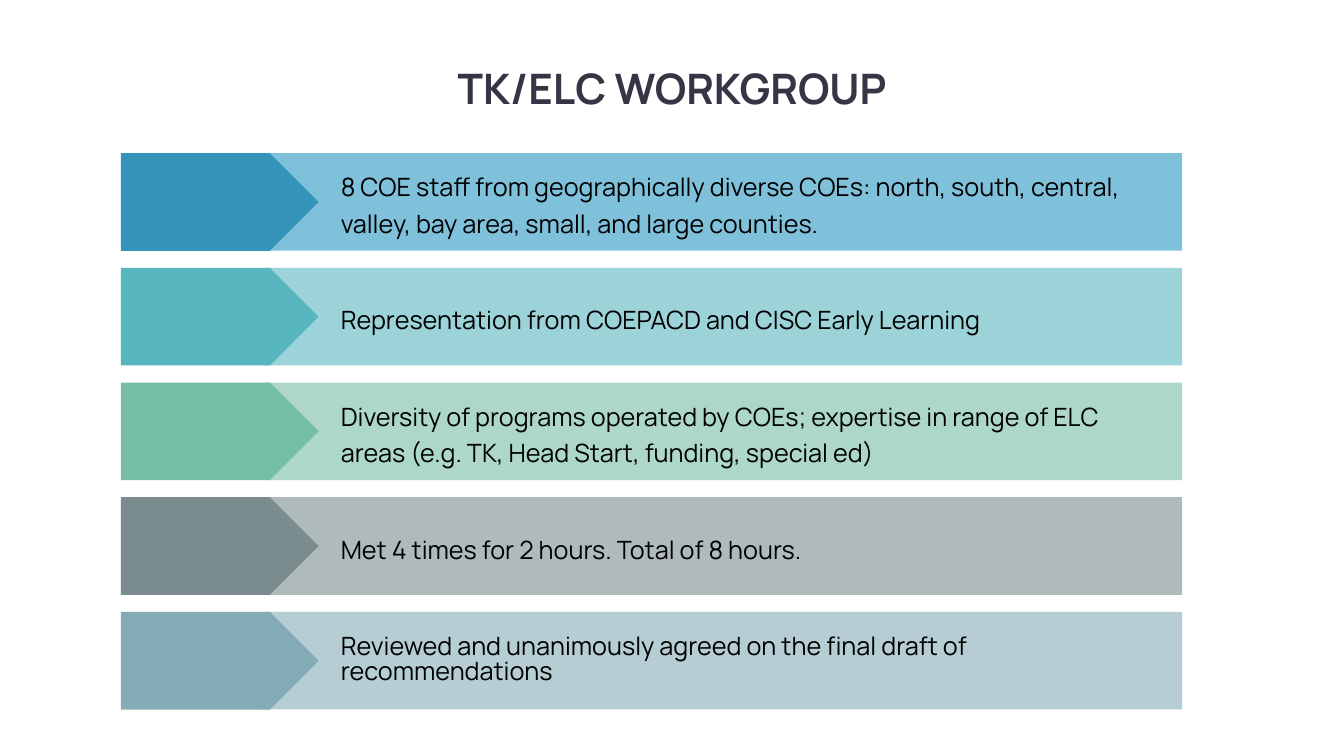
from pptx import Presentation
from pptx.dml.color import RGBColor
from pptx.enum.shapes import MSO_SHAPE
from pptx.enum.text import MSO_ANCHOR, PP_ALIGN
from pptx.util import Cm, Pt

RECTANGLE = MSO_SHAPE.RECTANGLE
PENTAGON = MSO_SHAPE.PENTAGON
MIDDLE = MSO_ANCHOR.MIDDLE
CENTER = PP_ALIGN.CENTER

FONT = "Manrope"
TITLE_COLOR = RGBColor(0x37, 0x35, 0x45)
BLACK = RGBColor(0x00, 0x00, 0x00)
BLUE, LIGHT_BLUE = RGBColor(0x34, 0x94, 0xBA), RGBColor(0x7F, 0xC1, 0xDB)
TEAL, LIGHT_TEAL = RGBColor(0x58, 0xB6, 0xC0), RGBColor(0x9B, 0xD3, 0xD9)
GREEN, LIGHT_GREEN = RGBColor(0x75, 0xBD, 0xA7), RGBColor(0xAC, 0xD7, 0xCA)
GRAY, LIGHT_GRAY = RGBColor(0x7A, 0x8C, 0x8E), RGBColor(0xAF, 0xBA, 0xBB)
STEEL, LIGHT_STEEL = RGBColor(0x84, 0xAC, 0xB6), RGBColor(0xB5, 0xCD, 0xD3)

FIRST_TOP = 3.86
ROW_PITCH = 2.89
ROW_HEIGHT = 2.46

# Arrow colour, band colour, text box height in cm, line spacing, text
ROWS = [
    (BLUE, LIGHT_BLUE, 1.94, 1.2,
     "8 COE staff from geographically diverse COEs: north, south, central, "
     "valley, bay area, small, and large counties."),
    (TEAL, LIGHT_TEAL, 1, 1.2,
     "Representation from COEPACD and CISC Early Learning"),
    (GREEN, LIGHT_GREEN, 1.94, 1.2,
     "Diversity of programs operated by COEs; expertise in range of ELC "
     "areas (e.g. TK, Head Start, funding, special ed)"),
    (GRAY, LIGHT_GRAY, 1, 1.2,
     "Met 4 times for 2 hours. Total of 8 hours."),
    (STEEL, LIGHT_STEEL, 1.42, Pt(17.5),
     "Reviewed and unanimously agreed on the final draft of recommendations"),
]

presentation = Presentation()
presentation.slide_width = Cm(33.87)
presentation.slide_height = Cm(19.05)
slide = presentation.slides.add_slide(presentation.slide_layouts[6])


def add_block(kind, left, top, width, color):
    shape = slide.shapes.add_shape(kind, Cm(left), Cm(top), Cm(width), Cm(ROW_HEIGHT))
    shape.shadow.inherit = False
    shape.fill.solid()
    shape.fill.fore_color.rgb = color
    shape.line.fill.background()


def format_text(paragraph, size, color, bold=False):
    for run in paragraph.runs:
        run.font.name = FONT
        run.font.size = Pt(size)
        run.font.bold = bold
        run.font.color.rgb = color


title = slide.shapes.add_textbox(Cm(11.1), Cm(1.45), Cm(11.68), Cm(1.55))
title.text_frame.word_wrap = False
title.text_frame.text = "TK/ELC WORKGROUP"
title_paragraph = title.text_frame.paragraphs[0]
title_paragraph.alignment = CENTER
format_text(title_paragraph, 30, TITLE_COLOR, bold=True)

for index, (arrow_color, band_color, text_height, spacing, text) in enumerate(ROWS):
    top = FIRST_TOP + index * ROW_PITCH
    add_block(RECTANGLE, 6.63, top, 23.16, band_color)
    add_block(PENTAGON, 3.05, top, 4.98, arrow_color)

    text_top = top + (ROW_HEIGHT - text_height) / 2
    box = slide.shapes.add_textbox(Cm(8.46), Cm(text_top), Cm(20.93), Cm(text_height))
    frame = box.text_frame
    frame.word_wrap = True
    frame.vertical_anchor = MIDDLE
    frame.margin_left = frame.margin_right = Cm(0.13)
    frame.margin_top = frame.margin_bottom = Cm(0.08)
    frame.text = text
    paragraph = frame.paragraphs[0]
    paragraph.line_spacing = spacing
    format_text(paragraph, 18, BLACK)

presentation.save("out.pptx")
